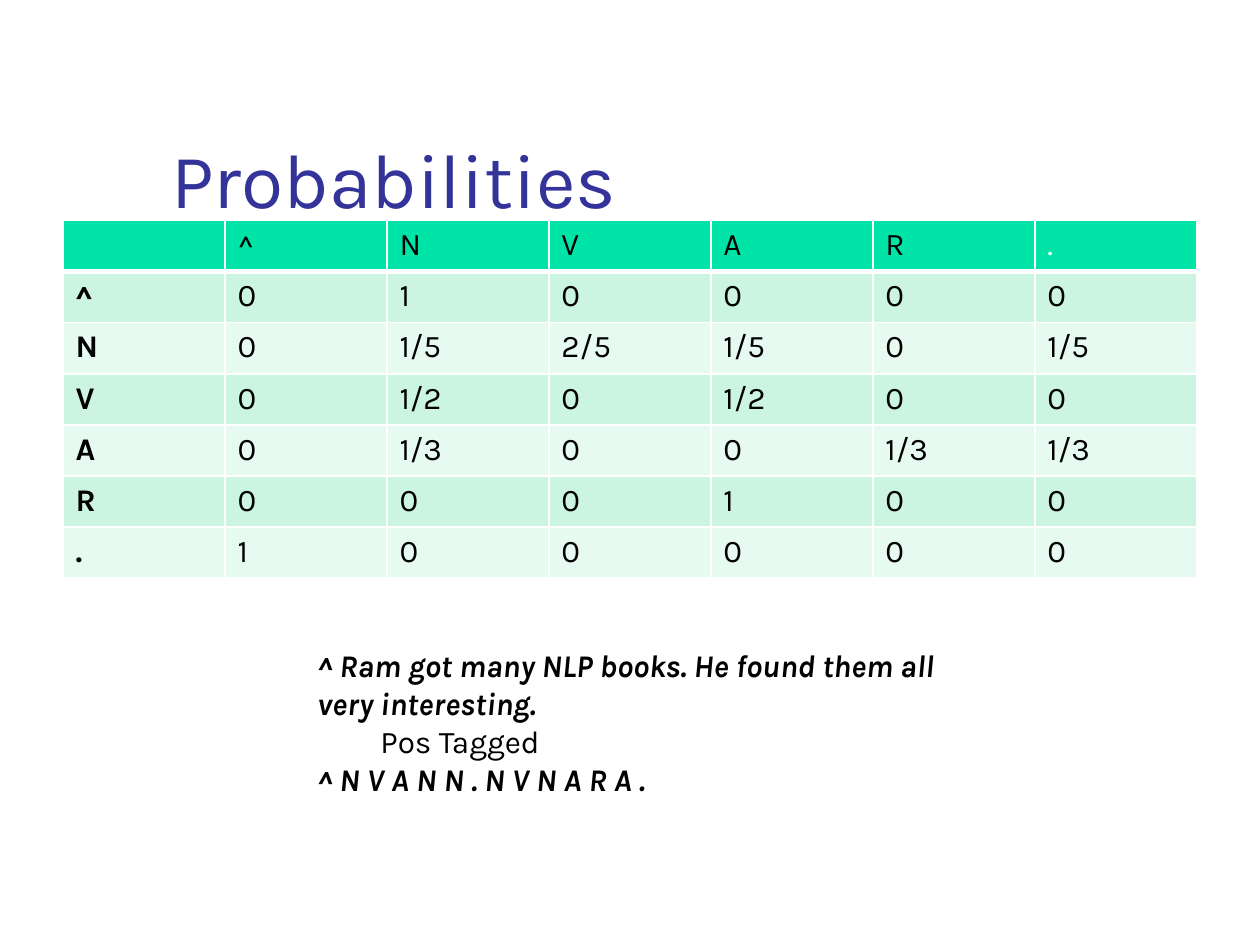
from dataclasses import dataclass

from lxml import etree
from pptx import Presentation
from pptx.dml.color import RGBColor
from pptx.enum.text import MSO_ANCHOR, MSO_AUTO_SIZE
from pptx.oxml.ns import qn
from pptx.util import Pt

TOP = MSO_ANCHOR.TOP
BOTTOM = MSO_ANCHOR.BOTTOM
NO_FIT = MSO_AUTO_SIZE.NONE
GROW = MSO_AUTO_SIZE.SHAPE_TO_FIT_TEXT
BLANK_LAYOUT = 6


@dataclass(frozen=True)
class Theme:
    font: str = "Karla"
    title_size: float = 44
    body_size: float = 18
    title_color: str = "333399"
    text_color: str = "000000"
    white: str = "FFFFFF"
    header_fill: str = "00E4A8"
    band_fills: tuple = ("CCF5E1", "E7FAF1")
    grid_width: float = 1
    header_rule_width: float = 3


def write_text(paragraph, text, *, font, size, color, bold=False, italic=False,
               level=0, margin=0):
    paragraph.level = level
    properties = paragraph._p.get_or_add_pPr()
    properties.set("marL", str(Pt(margin)))
    properties.set("indent", "0")
    run = paragraph.add_run()
    run.text = text
    run.font.name = font
    run.font.size = Pt(size)
    run.font.bold = bold
    run.font.italic = italic
    run.font.color.rgb = RGBColor.from_string(color)


class SlideBuilder:
    def __init__(self, slide, theme):
        self.slide = slide
        self.theme = theme

    def text_box(self, left, top, width, height, lines, anchor=TOP, fit=NO_FIT):
        shape = self.slide.shapes.add_textbox(Pt(left), Pt(top), Pt(width), Pt(height))
        frame = shape.text_frame
        frame.word_wrap = True
        frame.auto_size = fit
        frame.vertical_anchor = anchor
        for index, (text, style) in enumerate(lines):
            paragraph = frame.add_paragraph() if index else frame.paragraphs[0]
            write_text(paragraph, text, font=self.theme.font, **style)

    def borders(self, cell, bottom_width):
        properties = cell._tc.get_or_add_tcPr()
        grid = self.theme.grid_width
        widths = {"a:lnL": grid, "a:lnR": grid, "a:lnT": grid, "a:lnB": bottom_width}
        for position, (tag, width) in enumerate(widths.items()):
            line = etree.Element(qn(tag), w=str(Pt(width)))
            fill = etree.SubElement(line, qn("a:solidFill"))
            etree.SubElement(fill, qn("a:srgbClr"), val=self.theme.white)
            properties.insert(position, line)

    def table(self, left, top, width, height, rows):
        theme = self.theme
        row_count, column_count = len(rows), len(rows[0])
        table = self.slide.shapes.add_table(
            row_count, column_count, Pt(left), Pt(top), Pt(width), Pt(height)).table
        table.horz_banding = False
        for column in table.columns:
            column.width = Pt(width / column_count)
        for row in table.rows:
            row.height = Pt(height / row_count)
        for row_index, values in enumerate(rows):
            header = row_index == 0
            fill = theme.header_fill if header else theme.band_fills[(row_index - 1) % 2]
            for column_index, value in enumerate(values):
                cell = table.cell(row_index, column_index)
                cell.fill.solid()
                cell.fill.fore_color.rgb = RGBColor.from_string(fill)
                self.borders(cell, theme.header_rule_width if header else theme.grid_width)
                if value:
                    last_header = header and column_index == column_count - 1
                    write_text(
                        cell.text_frame.paragraphs[0], value,
                        font=theme.font, size=theme.body_size,
                        color=theme.white if last_header else theme.text_color,
                        bold=not header and column_index == 0)


def main():
    theme = Theme()
    presentation = Presentation()
    presentation.slide_width = Pt(720)
    presentation.slide_height = Pt(540)
    slide = presentation.slides.add_slide(presentation.slide_layouts[BLANK_LAYOUT])
    builder = SlideBuilder(slide, theme)

    title_style = {"size": theme.title_size, "color": theme.title_color}
    builder.text_box(90.72, 16.56, 613.44, 115.2,
                     [("Probabilities", title_style)], anchor=BOTTOM)

    tags = ["^", "N", "V", "A", "R", "."]
    probabilities = [
        ["0", "1", "0", "0", "0", "0"],
        ["0", "1/5", "2/5", "1/5", "0", "1/5"],
        ["0", "1/2", "0", "1/2", "0", "0"],
        ["0", "1/3", "0", "0", "1/3", "1/3"],
        ["0", "0", "0", "1", "0", "0"],
        ["1", "0", "0", "0", "0", "0"],
    ]
    rows = [["", *tags]]
    rows += [[tag, *values] for tag, values in zip(tags, probabilities)]
    builder.table(36, 126, 648, 204.48, rows)

    plain = {"size": theme.body_size, "color": theme.text_color, "margin": 36}
    example = {**plain, "bold": True, "italic": True, "level": 1}
    builder.text_box(138.24, 365.76, 426.24, 94.32, [
        ("^ Ram got many NLP books. He found them all very interesting.", example),
        ("\tPos Tagged", plain),
        ("^ N V A N N . N V N A R A .", example),
    ], fit=GROW)

    presentation.save("out.pptx")


if __name__ == "__main__":
    main()
